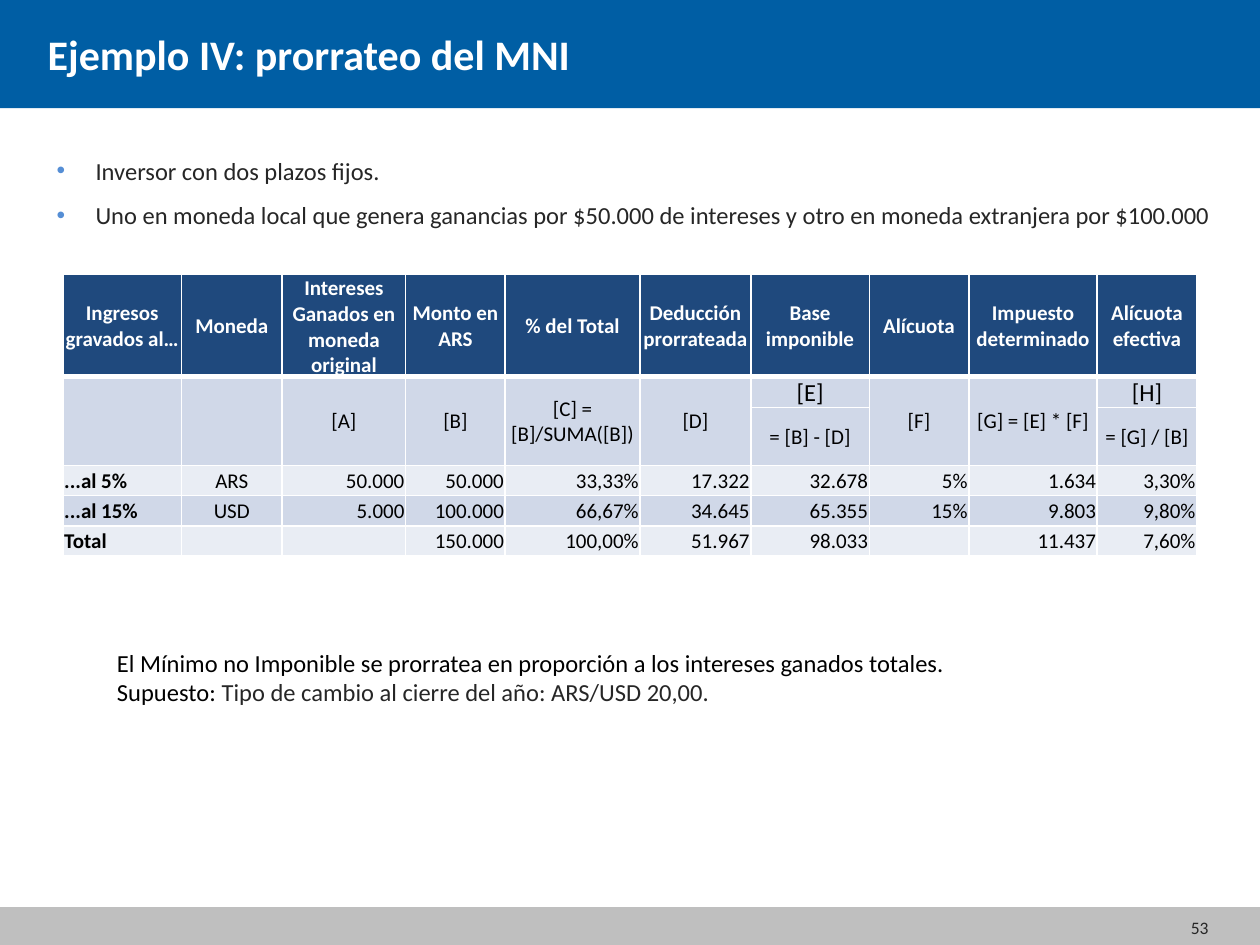
"""Build the slide about prorating the non-taxable minimum between two deposits."""
import dataclasses
import typing

import lxml.etree
import pptx
import pptx.dml.color
import pptx.enum.shapes
import pptx.enum.text
import pptx.oxml.ns
import pptx.slide
import pptx.table
import pptx.text.text
import pptx.util

Inches = pptx.util.Inches
Pt = pptx.util.Pt
Align = pptx.enum.text.PP_ALIGN
Anchor = pptx.enum.text.MSO_ANCHOR
qn = pptx.oxml.ns.qn

FONT = "Calibri"
WHITE, BLACK, DARK = "FFFFFF", "000000", "262626"
BLUE, GREY, BULLET = "005EA4", "BFBFBF", "558ED5"
NAVY, BAND, PALE = "1F497D", "D0D8E8", "E9EDF4"


@dataclasses.dataclass
class Span:
    text: str
    size: float = 14
    color: str = DARK
    bold: bool = False


@dataclasses.dataclass
class TextBox:
    left: float
    top: float
    width: float
    height: float
    lines: list[list[Span]]
    align: typing.Any = Align.LEFT
    anchor: typing.Any = Anchor.TOP
    wrap: bool = True
    bullets: bool = False


@dataclasses.dataclass
class TableRow:
    height: float
    fill: str
    texts: list[str]
    kind: str = "data"


COLUMNS = [0.94, 0.8, 0.98, 0.79, 1.07, 0.88, 0.94, 0.79, 1.02, 0.79]
SPLIT_COLUMNS = (6, 9)
ROWS = [
    TableRow(0.8, NAVY, ["Ingresos gravados al…", "Moneda", "Intereses Ganados en moneda original",
                         "Monto en ARS", "% del Total", "Deducción prorrateada", "Base imponible",
                         "Alícuota", "Impuesto determinado", "Alícuota efectiva"], "header"),
    TableRow(0.23, BAND, ["", "", "[A]", "[B]", "[C] = [B]/SUMA([B])", "[D]", "[E]", "[F]",
                          "[G] = [E] * [F]", "[H]"], "formula"),
    TableRow(0.46, BAND, ["", "", "", "", "", "", "= [B] - [D]", "", "", "= [G] / [B]"], "formula"),
    TableRow(0.24, PALE, ["...al 5%", "ARS", "50.000", "50.000", "33,33%", "17.322", "32.678",
                          "5%", "1.634", "3,30%"]),
    TableRow(0.24, BAND, ["...al 15%", "USD", "5.000", "100.000", "66,67%", "34.645", "65.355",
                          "15%", "9.803", "9,80%"]),
    TableRow(0.24, PALE, ["Total", "", "", "150.000", "100,00%", "51.967", "98.033", "",
                          "11.437", "7,60%"]),
]
TEXT_BOXES = [
    TextBox(7.36, 7.16, 2.33, 0.4, [[Span("53", 10)]], Align.RIGHT, Anchor.MIDDLE),
    TextBox(0.28, 0.18, 9.45, 0.5, [[Span("Ejemplo IV: prorrateo del MNI", 24, WHITE, True)]]),
    TextBox(0.35, 1.07, 9.49, 0.81, [
        [Span("Inversor con dos plazos fijos.")],
        [Span("Uno en moneda local que genera ganancias por $50.000 de intereses "
              "y otro en moneda extranjera por $100.000")],
    ], wrap=False, bullets=True),
    TextBox(0.83, 5.09, 8.39, 0.57, [
        [Span("El Mínimo no Imponible se prorratea en proporción a los intereses "
              "ganados totales.", color=BLACK)],
        [Span("Supuesto: ", color=BLACK),
         Span("Tipo de cambio al cierre del año: ARS/USD 20,00.")],
    ]),
]


def rgb(value: str) -> pptx.dml.color.RGBColor:
    return pptx.dml.color.RGBColor.from_string(value)


def add_span(paragraph: typing.Any, span: Span) -> None:
    run = paragraph.add_run()
    run.text = span.text
    run.font.name = FONT
    run.font.size = Pt(span.size)
    run.font.bold = span.bold
    run.font.color.rgb = rgb(span.color)


def add_bullet(paragraph: typing.Any) -> None:
    paragraph.line_spacing = 1.5
    properties = paragraph._p.get_or_add_pPr()
    properties.set("marL", str(Inches(0.31)))
    properties.set("indent", str(-Inches(0.31)))
    color = lxml.etree.SubElement(properties, qn("a:buClr"))
    lxml.etree.SubElement(color, qn("a:srgbClr"), val=BULLET)
    lxml.etree.SubElement(properties, qn("a:buFont"), typeface="Arial")
    lxml.etree.SubElement(properties, qn("a:buChar"), char="•")


def add_text_box(page: pptx.slide.Slide, item: TextBox) -> None:
    box = page.shapes.add_textbox(Inches(item.left), Inches(item.top),
                                  Inches(item.width), Inches(item.height))
    frame = box.text_frame
    frame.word_wrap = item.wrap
    frame.vertical_anchor = item.anchor
    for index, spans in enumerate(item.lines):
        paragraph = frame.add_paragraph() if index else frame.paragraphs[0]
        paragraph.alignment = item.align
        if item.bullets:
            add_bullet(paragraph)
        for span in spans:
            add_span(paragraph, span)


def add_band(page: pptx.slide.Slide, top: float, height: float, color: str) -> typing.Any:
    band = page.shapes.add_shape(pptx.enum.shapes.MSO_SHAPE.RECTANGLE,
                                 Inches(0), Inches(top), Inches(10), Inches(height))
    band.shadow.inherit = False
    band.fill.solid()
    band.fill.fore_color.rgb = rgb(color)
    band.line.fill.background()
    return band


def set_borders(cell: pptx.table._Cell, widths: dict[str, float]) -> None:
    properties = cell._tc.get_or_add_tcPr()
    for index, (side, width) in enumerate(widths.items()):
        line = lxml.etree.Element(qn(f"a:ln{side}"), w=str(Pt(width)))
        fill = lxml.etree.SubElement(line, qn("a:solidFill"))
        lxml.etree.SubElement(fill, qn("a:srgbClr"), val=WHITE)
        properties.insert(index, line)


def fill_cell(cell: pptx.table._Cell, row: TableRow, row_index: int, column: int) -> None:
    cell.margin_left = cell.margin_right = cell.margin_top = Inches(0.01)
    cell.margin_bottom = Inches(0)
    cell.vertical_anchor = Anchor.MIDDLE
    cell.fill.solid()
    cell.fill.fore_color.rgb = rgb(row.fill)
    set_borders(cell, {"L": 1, "R": 1, "T": 3 if row_index == 1 else 1,
                       "B": 3 if row.kind == "header" else 1})
    paragraph = cell.text_frame.paragraphs[0]
    text = row.texts[column]
    if not text:
        lxml.etree.SubElement(paragraph._p, qn("a:endParaRPr"), sz="1200")
        return
    if row.kind != "data" or column == 1:
        paragraph.alignment = Align.CENTER
    else:
        paragraph.alignment = Align.RIGHT if column else Align.LEFT
    header = row.kind == "header"
    bold = header or (row.kind == "data" and column == 0)
    size = 14 if text in ("[E]", "[H]") else 12
    add_span(paragraph, Span(text, size, WHITE if header else BLACK, bold))


def add_tax_table(page: pptx.slide.Slide) -> None:
    height = sum(row.height for row in ROWS)
    table = page.shapes.add_table(len(ROWS), len(COLUMNS), Inches(0.5), Inches(2.18),
                                  Inches(sum(COLUMNS)), Inches(height)).table
    for column, width in enumerate(COLUMNS):
        table.columns[column].width = Inches(width)
    for row_index, row in enumerate(ROWS):
        table.rows[row_index].height = Inches(row.height)
        for column in range(len(COLUMNS)):
            fill_cell(table.cell(row_index, column), row, row_index, column)
    for column in range(len(COLUMNS)):
        if column not in SPLIT_COLUMNS:
            table.cell(1, column).merge(table.cell(2, column))


def main() -> None:
    deck = pptx.Presentation()
    deck.slide_width, deck.slide_height = Inches(10), Inches(7.5)
    page = deck.slides.add_slide(deck.slide_layouts[6])
    add_band(page, 0, 0.86, BLUE)
    footer = add_band(page, 7.21, 0.29, GREY)
    footer.line.color.rgb = rgb(GREY)
    footer.line.width = Pt(2)
    for item in TEXT_BOXES:
        add_text_box(page, item)
    add_tax_table(page)
    deck.save("out.pptx")


if __name__ == "__main__":
    main()
